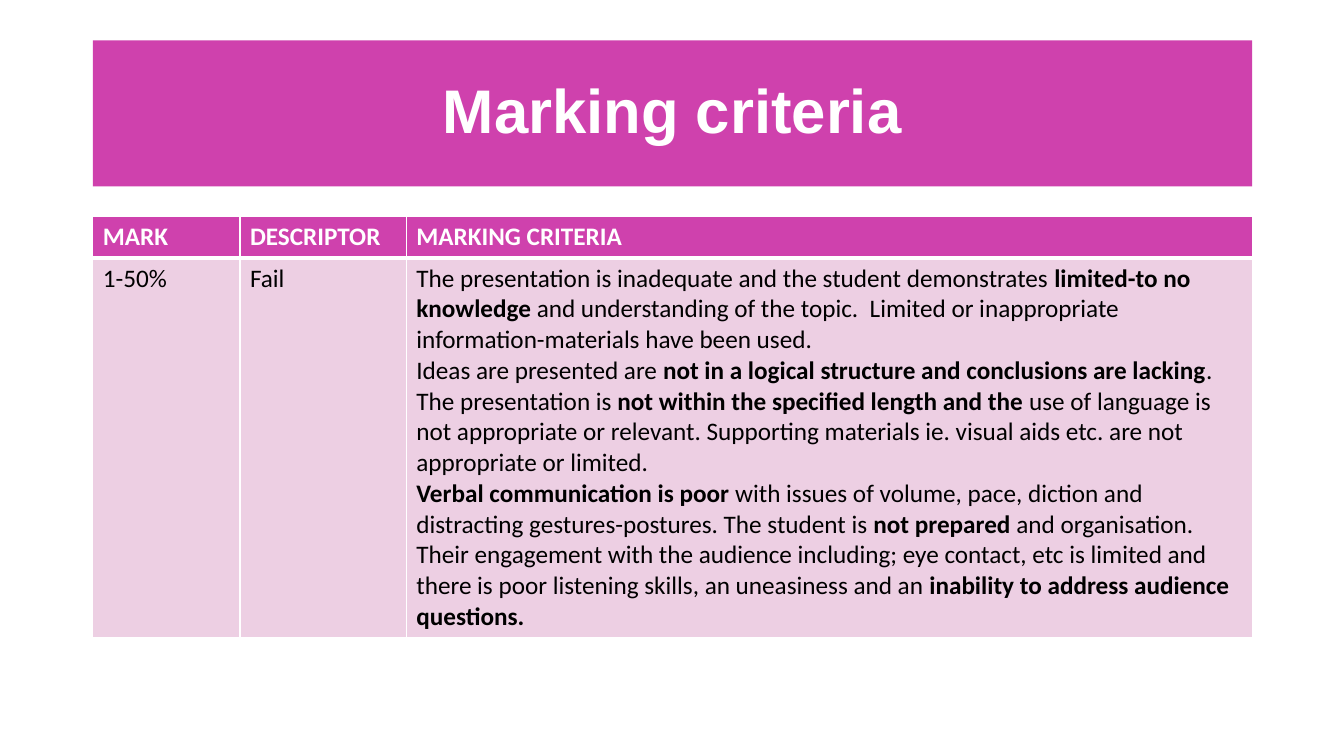
from dataclasses import dataclass

from lxml import etree
from pptx import Presentation
from pptx.dml.color import RGBColor
from pptx.enum import text
from pptx.oxml import ns
from pptx.util import Inches, Pt

TITLE = "Marking criteria"
HEADINGS = ["MARK", "DESCRIPTOR", "MARKING CRITERIA"]
# Each cell is a list of paragraphs; each paragraph is a list of (text, bold).
FAIL_ROW = [
    [[("1-50%", False)]],
    [[("Fail", False)]],
    [
        [("The presentation is inadequate and the student demonstrates ", False),
         ("limited-to no knowledge ", True),
         ("and understanding of the topic.  Limited or inappropriate "
          "information-materials have been used.", False)],
        [("Ideas are presented are ", False),
         ("not in a logical structure and conclusions are lacking", True),
         (".", False)],
        [("The presentation is ", False),
         ("not within the specified length and the ", True),
         ("use of language is not appropriate or relevant. Supporting materials "
          "ie. visual aids etc. are not appropriate or limited.", False)],
        [("Verbal communication is poor ", True),
         ("with issues of volume, pace, diction and distracting "
          "gestures-postures. The student is ", False),
         ("not prepared ", True),
         ("and organisation. Their engagement with the audience including; eye "
          "contact, etc is limited and there is poor listening skills, an "
          "uneasiness and an ", False),
         ("inability to address audience questions.", True)],
    ],
]
ROWS = [[[[(heading, True)]] for heading in HEADINGS], FAIL_ROW]

LEFT, WIDTH = 0.92, 11.5
TITLE_TOP, TITLE_HEIGHT = 0.4, 1.45
TABLE_TOP = 2.15
COLUMN_WIDTHS = [1.46, 1.65, 8.39]
ROW_HEIGHTS = [0.41, 3.7]


@dataclass(frozen=True)
class Theme:
    accent: RGBColor = RGBColor(0xCF, 0x41, 0xAD)
    tint: RGBColor = RGBColor(0xED, 0xCF, 0xE3)
    white: RGBColor = RGBColor(0xFF, 0xFF, 0xFF)
    black: RGBColor = RGBColor(0, 0, 0)
    title_font: str = "Arial"
    table_font: str = "Calibri"
    title_size: int = 44
    table_size: int = 18
    thin_border: int = 1
    thick_border: int = 3


THEME = Theme()


def set_font(font, name, size, color):
    font.name, font.size = name, Pt(size)
    font.color.rgb = color


def add_title(slide):
    title = slide.shapes.title
    title.left, title.top = Inches(LEFT), Inches(TITLE_TOP)
    title.width, title.height = Inches(WIDTH), Inches(TITLE_HEIGHT)
    title.fill.solid()
    title.fill.fore_color.rgb = THEME.accent
    title.text_frame.text = TITLE
    title.text_frame.vertical_anchor = text.MSO_ANCHOR.MIDDLE
    paragraph = title.text_frame.paragraphs[0]
    paragraph.alignment = text.PP_ALIGN.CENTER
    paragraph.line_spacing = 0.9
    set_font(paragraph.font, THEME.title_font, THEME.title_size, THEME.white)
    paragraph.font.bold = True


def set_borders(cell, top, bottom):
    """Draw white cell borders; top and bottom are widths in points."""
    properties = cell._tc.get_or_add_tcPr()
    sides = {"L": THEME.thin_border, "R": THEME.thin_border, "T": top, "B": bottom}
    for side, width in sides.items():
        line = etree.SubElement(properties, ns.qn(f"a:ln{side}"), w=str(Pt(width)))
        fill = etree.SubElement(line, ns.qn("a:solidFill"))
        etree.SubElement(fill, ns.qn("a:srgbClr"), val=str(THEME.white))


def fill_cell(cell, paragraphs, is_header):
    thin, thick = THEME.thin_border, THEME.thick_border
    set_borders(cell, thin if is_header else thick, thick if is_header else thin)
    cell.fill.solid()
    cell.fill.fore_color.rgb = THEME.accent if is_header else THEME.tint
    color = THEME.white if is_header else THEME.black
    frame = cell.text_frame
    for index, runs in enumerate(paragraphs):
        paragraph = frame.add_paragraph() if index else frame.paragraphs[0]
        for words, bold in runs:
            run = paragraph.add_run()
            run.text = words
            run.font.bold = bold
            set_font(run.font, THEME.table_font, THEME.table_size, color)


def add_criteria_table(slide):
    table = slide.shapes.add_table(
        len(ROWS), len(HEADINGS), Inches(LEFT), Inches(TABLE_TOP),
        Inches(WIDTH), Inches(sum(ROW_HEIGHTS))).table
    for column, width in zip(table.columns, COLUMN_WIDTHS):
        column.width = Inches(width)
    for row_index, (row, height) in enumerate(zip(table.rows, ROW_HEIGHTS)):
        row.height = Inches(height)
        for cell, paragraphs in zip(row.cells, ROWS[row_index]):
            fill_cell(cell, paragraphs, is_header=row_index == 0)


def main():
    presentation = Presentation()
    presentation.slide_width = Inches(13.33)
    presentation.slide_height = Inches(7.5)
    title_only = presentation.slide_layouts[5]
    slide = presentation.slides.add_slide(title_only)
    add_title(slide)
    add_criteria_table(slide)
    presentation.save("out.pptx")


if __name__ == "__main__":
    main()
